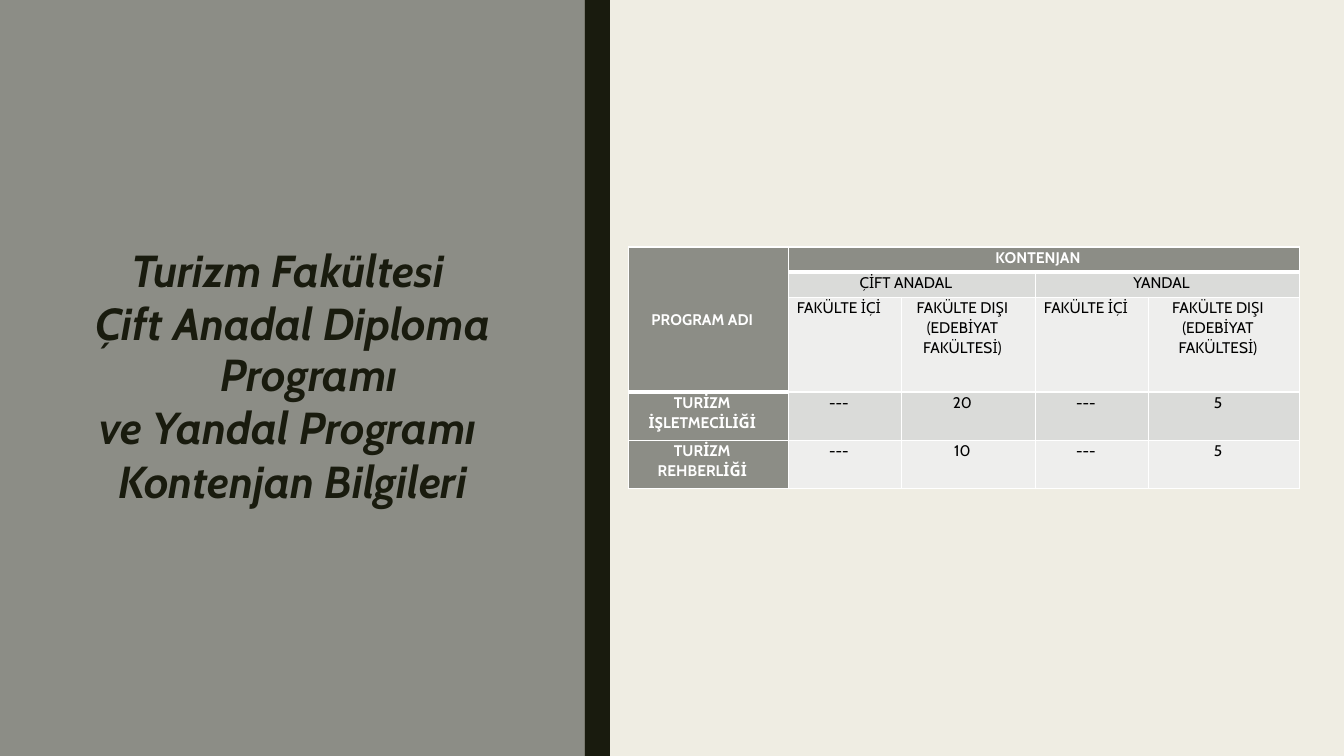
from dataclasses import dataclass

from lxml.etree import SubElement
from pptx import Presentation
from pptx.dml.color import RGBColor
from pptx.enum.shapes import MSO_SHAPE
from pptx.enum.text import MSO_ANCHOR, MSO_AUTO_SIZE, PP_ALIGN
from pptx.oxml.ns import qn
from pptx.util import Inches, Pt


@dataclass(frozen=True)
class Theme:
    font: str = "Cabin"
    background: str = "EFEDE3"
    panel: str = "8C8D86"
    dark: str = "191B0E"
    white: str = "FFFFFF"
    black: str = "000000"
    band_dark: str = "DADBD9"
    band_light: str = "EEEEED"
    title_size: int = 32
    table_size: int = 11
    thin_line: int = 1
    thick_line: int = 3


THEME = Theme()
SLIDE_WIDTH, SLIDE_HEIGHT = Inches(13.33), Inches(7.5)

# Lengths in percent of the slide's width or height
PANEL_WIDTH, BAR_WIDTH = 43.5, 1.88
TITLE_BOX = (5.33, 31.6, 32.93, 36.67)
TABLE_LEFT, TABLE_TOP = 46.74, 32.67
COLUMN_WIDTHS = (11.93, 8.4, 9.98, 8.4, 11.25)
ROW_HEIGHTS = (3.33, 3.33, 12.53, 6.4, 6.4)

TITLE_LINES = (
    "Turizm Fakültesi ",
    "Çift Anadal Diploma Programı ",
    "ve Yandal Programı ",
    "Kontenjan Bilgileri",
)
INSIDE, OUTSIDE = "FAKÜLTE İÇİ", "FAKÜLTE DIŞI (EDEBİYAT FAKÜLTESİ)"
QUOTAS = (
    ("PROGRAM ADI", "KONTENJAN", "", "", ""),
    ("", "ÇİFT ANADAL", "", "YANDAL", ""),
    ("", INSIDE, OUTSIDE, INSIDE, OUTSIDE),
    ("TURİZM İŞLETMECİLİĞİ", "---", "20", "---", "5"),
    ("TURİZM REHBERLİĞİ", "---", "10", "---", "5"),
)
MERGES = (((0, 0), (2, 0)), ((0, 1), (0, 4)), ((1, 1), (1, 2)), ((1, 3), (1, 4)))


def across(percent):
    return round(SLIDE_WIDTH * percent / 100)


def down(percent):
    return round(SLIDE_HEIGHT * percent / 100)


def color(code):
    return RGBColor.from_string(code)


def format_paragraph(paragraph, size, code, spacing, after, bold, italic=False):
    paragraph.alignment = PP_ALIGN.CENTER
    paragraph.line_spacing = spacing
    paragraph.space_before = Pt(0)
    paragraph.space_after = Pt(after)
    font = paragraph.font
    font.name, font.size = THEME.font, Pt(size)
    font.bold, font.italic = bold, italic
    font.color.rgb = color(code)


def add_band(slide, left, width, code):
    band = slide.shapes.add_shape(
        MSO_SHAPE.RECTANGLE, across(left), 0, across(width), SLIDE_HEIGHT)
    band.shadow.inherit = False
    band.fill.solid()
    band.fill.fore_color.rgb = color(code)
    band.line.fill.background()


def add_title(slide):
    title = slide.shapes.title
    left, top, width, height = TITLE_BOX
    title.left, title.top = across(left), down(top)
    title.width, title.height = across(width), down(height)
    frame = title.text_frame
    frame.word_wrap = True
    frame.auto_size = MSO_AUTO_SIZE.NONE
    frame.vertical_anchor = MSO_ANCHOR.MIDDLE
    frame.text = "\n".join(TITLE_LINES)
    for paragraph in frame.paragraphs:
        format_paragraph(paragraph, THEME.title_size, THEME.dark, 0.94, 2, True, True)
        # Hanging indent
        properties = paragraph._p.get_or_add_pPr()
        properties.set("marL", str(Inches(0.42)))
        properties.set("indent", str(Inches(-0.42)))
    # Bring the title in front of the panel
    slide.shapes._spTree.append(title._element)


def set_borders(cell, thick_sides):
    properties = cell._tc.get_or_add_tcPr()
    for side in "LRTB":
        width = THEME.thick_line if side in thick_sides else THEME.thin_line
        line = SubElement(properties, qn(f"a:ln{side}"), w=str(Pt(width)))
        fill = SubElement(line, qn("a:solidFill"))
        SubElement(fill, qn("a:srgbClr"), val=THEME.white)


def format_cell(cell, row, column):
    is_header = row == 0 or column == 0
    # Heavy rules run below the top header and below the program heading
    thick_sides = ""
    if (row, column > 0) in ((0, True), (2, False)):
        thick_sides = "B"
    elif (row, column > 0) in ((1, True), (3, False)):
        thick_sides = "T"
    set_borders(cell, thick_sides)

    band = THEME.band_dark if row % 2 else THEME.band_light
    cell.fill.solid()
    cell.fill.fore_color.rgb = color(THEME.panel if is_header else band)
    cell.margin_left, cell.margin_right = Inches(0.01), Inches(0.13)
    cell.margin_top = cell.margin_bottom = 0
    cell.vertical_anchor = MSO_ANCHOR.MIDDLE if row == column == 0 else MSO_ANCHOR.TOP
    cell.text = QUOTAS[row][column]
    format_paragraph(cell.text_frame.paragraphs[0], THEME.table_size,
                     THEME.white if is_header else THEME.black, 1.07, 8, is_header)


def add_quota_table(slide):
    table = slide.shapes.add_table(
        len(ROW_HEIGHTS), len(COLUMN_WIDTHS), across(TABLE_LEFT), down(TABLE_TOP),
        across(sum(COLUMN_WIDTHS)), down(sum(ROW_HEIGHTS))).table
    table.first_row = table.horz_banding = False
    for column, width in zip(table.columns, COLUMN_WIDTHS):
        column.width = across(width)
    for row, height in zip(table.rows, ROW_HEIGHTS):
        row.height = down(height)
    for first, last in MERGES:
        table.cell(*first).merge(table.cell(*last))
    for row in range(len(ROW_HEIGHTS)):
        for column in range(len(COLUMN_WIDTHS)):
            format_cell(table.cell(row, column), row, column)


def main():
    presentation = Presentation()
    presentation.slide_width, presentation.slide_height = SLIDE_WIDTH, SLIDE_HEIGHT
    slide = presentation.slides.add_slide(presentation.slide_layouts.get_by_name("Title Only"))
    slide.background.fill.solid()
    slide.background.fill.fore_color.rgb = color(THEME.background)

    # Left panel with its dark edge
    add_band(slide, 0, PANEL_WIDTH, THEME.panel)
    add_band(slide, PANEL_WIDTH, BAR_WIDTH, THEME.dark)
    add_title(slide)

    # Quotas by program
    add_quota_table(slide)
    presentation.save("out.pptx")


if __name__ == "__main__":
    main()
